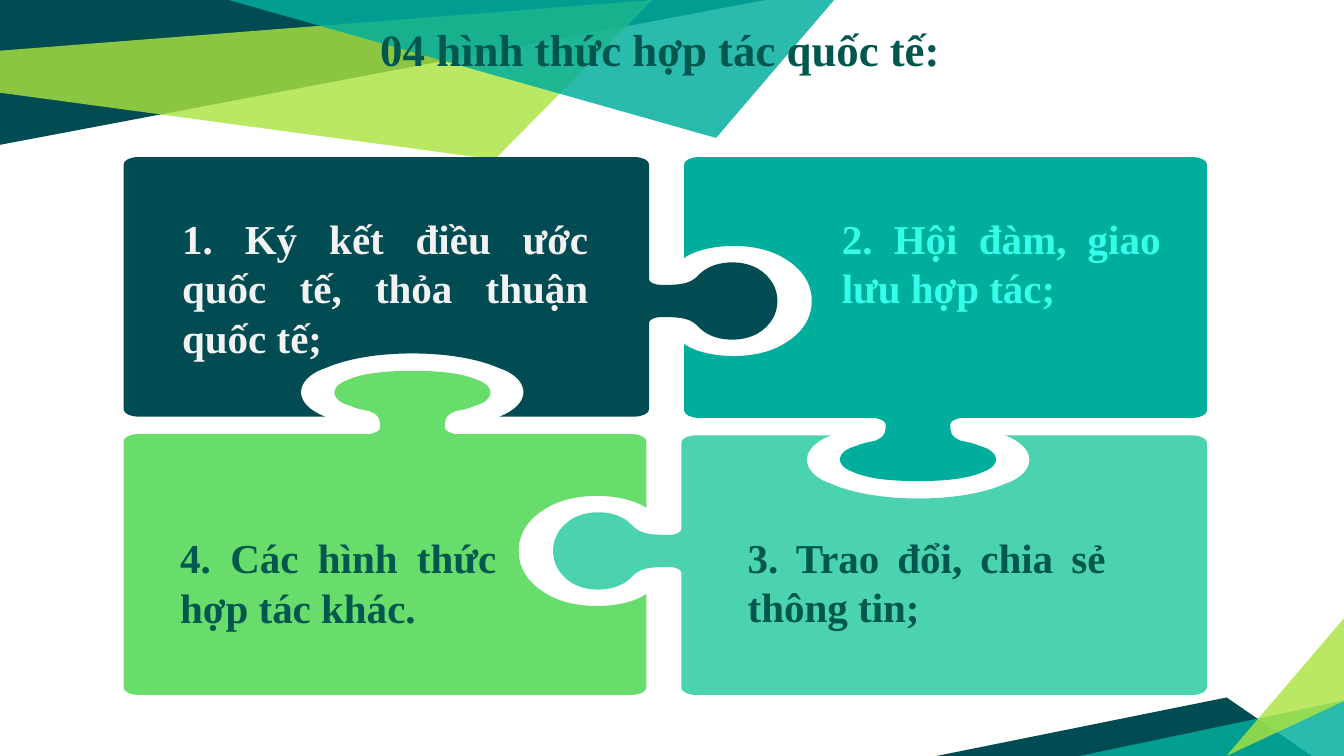
"""Build a slide with a four-piece puzzle of forms of international cooperation."""
import lxml.etree
import pptx
import pptx.dml.color
import pptx.enum.text
import pptx.oxml.ns
import pptx.util

Pt = pptx.util.Pt
qn = pptx.oxml.ns.qn
COLORS = {
    "navy": "004C52", "lime": "ABE33F", "teal": "00AE9D", "green": "68DD6B",
    "mint": "4BD3B0", "ink": "00574E", "pale": "F2F2F2", "aqua": "35FFEB",
}
LEFT, TOP, RIGHT = 66.2, 84.2, 646.6
ROW_MIDDLE = 161.3
NAVY_RIGHT, NAVY_BOTTOM, NAVY_SOCKET_X = 347.8, 223.2, 220.9
TEAL_LEFT, TEAL_BOTTOM, TEAL_KNOB_X = 366.5, 223.9, 491.8
TURN_X, TURN_Y = 712.8, 456.5
CORNER_X, CORNER_Y = 7.7, 4

NAVY_SOCKET = [
    (174.2, 223.2), (166.3, 220.3), (161.3, 215.3), (161.3, 210.2),
    (161.3, 205.2), (165.6, 200.2), (174.2, 197.3),
    (185.8, 192.2), (202.3, 189.4), (220.9, 189.4),
]
NAVY_KNOB = [
    (347.8, 172.8), (347.8, 171.4), (350.6, 169.9), (354.2, 169.9),
    (360.7, 169.9), (367.2, 169.9), (371.5, 172.8),
    (373.7, 174.2), (375.1, 176.4), (377.3, 177.8),
    (384.5, 182.9), (397.4, 183.6), (406.1, 178.6),
    (413.3, 174.2), (416.5, 167.8), (416.5, 161.3),
]
TEAL_SOCKET = [
    (366.5, 138.2), (373, 133.9), (383, 131.8), (393.1, 131.8),
    (403.2, 131.8), (412.6, 133.9), (419.8, 138.2),
    (429.8, 144), (434.9, 151.9), (434.9, 161.3),
]
TEAL_KNOB = [
    (468.7, 223.9), (471.6, 224.6), (474.5, 225.4), (474.5, 227.5),
    (474.5, 231.1), (474.5, 234), (468.7, 236.2),
    (465.1, 236.9), (461.5, 237.6), (458.6, 239),
    (447.8, 241.9), (447.1, 249.1), (456.5, 252.7),
    (465.8, 257), (479.5, 257.8), (491.8, 257.8),
]
FACETS = [
    ("navy", 100, [(0, 0), (0, 77.6), (410, 0)]),
    ("lime", 81, [(0, 27.2), (0, 49.7), (265, 85.5), (349.5, 0)]),
    ("navy", 100, [(502, 405), (702.7, 405), (657.2, 373.7)]),
    ("teal", 83, [(720, 375.3), (720, 405), (578.5, 405)]),
    ("lime", 81, [(720, 375.6), (720, 331.2), (657, 405)]),
    ("teal", 83, [(122.5, 0), (383.6, 73.9), (446.8, 0)]),
]
LABELS = [
    ("1. Ký kết điều ước quốc tế, thỏa thuận quốc tế;", (90.5, 110.9, 231.8, 87.1), "pale"),
    ("2. Hội đàm, giao lưu hợp tác;", (443.9, 110.9, 185, 60.5), "aqua"),
    ("4. Các hình thức hợp tác khác.", (89.4, 281.9, 183.6, 60.5), "ink"),
    ("3. Trao đổi, chia sẻ thông tin;", (393.5, 281.5, 205.9, 60.5), "ink"),
]


def rgb(name):
    """Return the named colour."""
    return pptx.dml.color.RGBColor.from_string(COLORS[name])


def mirrored(half, x=None, y=None):
    """Complete a half curve by reflecting it in a vertical or horizontal axis."""
    other = [(px if x is None else 2 * x - px, py if y is None else 2 * y - py)
             for px, py in reversed(half)]
    return half + other[1:]


def corner(x, y, right, down):
    """Return a rounded corner, leading from its horizontal to its vertical side."""
    dx, dy = right * CORNER_X, down * CORNER_Y
    return [(x + dx, y), (x + 0.45 * dx, y), (x, y + 0.45 * dy), (x, y + dy)]


def turned(curves):
    """Turn curves by half a circle about the centre of the puzzle."""
    return [[(TURN_X - x, TURN_Y - y) for x, y in curve] for curve in curves]


def add_polygon(page, points, color, opacity=100):
    """Add a closed filled outline without a border."""
    corners = [(Pt(x), Pt(y)) for x, y in points]
    builder = page.shapes.build_freeform(*corners[0])
    builder.add_line_segments(corners[1:], close=True)
    shape = builder.convert_to_shape()
    shape.shadow.inherit = False
    shape.line.fill.background()
    shape.fill.solid()
    shape.fill.fore_color.rgb = rgb(color)
    if opacity < 100:
        tint = shape._element.spPr.find(qn("a:solidFill")).find(qn("a:srgbClr"))
        lxml.etree.SubElement(tint, qn("a:alpha"), val=str(opacity * 1000))
    return shape


def add_piece(page, curves, color):
    """Add an outline of cubic curves joined by straight sides."""
    shape = add_polygon(page, [point for curve in curves for point in curve], color)
    route = shape._element.spPr.find(".//" + qn("a:path"))
    nodes = iter(list(route))
    for curve in curves:
        next(nodes)
        for _ in range(len(curve) // 3):
            bend = next(nodes)
            bend.addprevious(lxml.etree.Element(qn("a:cubicBezTo")))
            cubic = bend.getprevious()
            for node in (bend, next(nodes), next(nodes)):
                cubic.append(node[0])
                route.remove(node)


def add_label(page, text, bounds, color, size=22, align="JUSTIFY"):
    """Add a bold wrapped text box."""
    box = page.shapes.add_textbox(*map(Pt, bounds))
    frame = box.text_frame
    frame.word_wrap = True
    frame.auto_size = pptx.enum.text.MSO_AUTO_SIZE.SHAPE_TO_FIT_TEXT
    para = frame.paragraphs[0]
    para.text = text
    para.alignment = pptx.enum.text.PP_ALIGN[align]
    para.font.name = "Times New Roman"
    para.font.size = Pt(size)
    para.font.bold = True
    para.font.color.rgb = rgb(color)


def add_puzzle(page):
    """Add the two upper pieces and their half-turned partners below."""
    navy = [
        mirrored(NAVY_SOCKET, x=NAVY_SOCKET_X),
        corner(NAVY_RIGHT, NAVY_BOTTOM, -1, -1),
        mirrored(NAVY_KNOB, y=ROW_MIDDLE),
        corner(NAVY_RIGHT, TOP, -1, 1)[::-1],
        corner(LEFT, TOP, 1, 1),
        corner(LEFT, NAVY_BOTTOM, 1, -1)[::-1],
    ]
    teal = [
        mirrored(TEAL_SOCKET, y=ROW_MIDDLE),
        corner(TEAL_LEFT, TEAL_BOTTOM, 1, -1)[::-1],
        mirrored(TEAL_KNOB, x=TEAL_KNOB_X),
        corner(RIGHT, TEAL_BOTTOM, -1, -1),
        corner(RIGHT, TOP, -1, 1)[::-1],
        corner(TEAL_LEFT, TOP, 1, 1),
    ]
    add_piece(page, navy, "navy")
    add_piece(page, teal, "teal")
    add_piece(page, turned(teal), "green")
    add_piece(page, turned(navy), "mint")


def main():
    """Build and save the deck."""
    deck = pptx.Presentation()
    deck.slide_width, deck.slide_height = Pt(720), Pt(405)
    page = deck.slides.add_slide(deck.slide_layouts[6])
    for color, opacity, points in FACETS:
        add_polygon(page, points, color, opacity)
    add_label(page, "04 hình thức hợp tác quốc tế:", (196.6, 7.9, 320.4, 36), "ink", 24, "LEFT")
    add_puzzle(page)
    for text, bounds, color in LABELS:
        add_label(page, text, bounds, color)
    deck.save("out.pptx")


if __name__ == "__main__":
    main()
